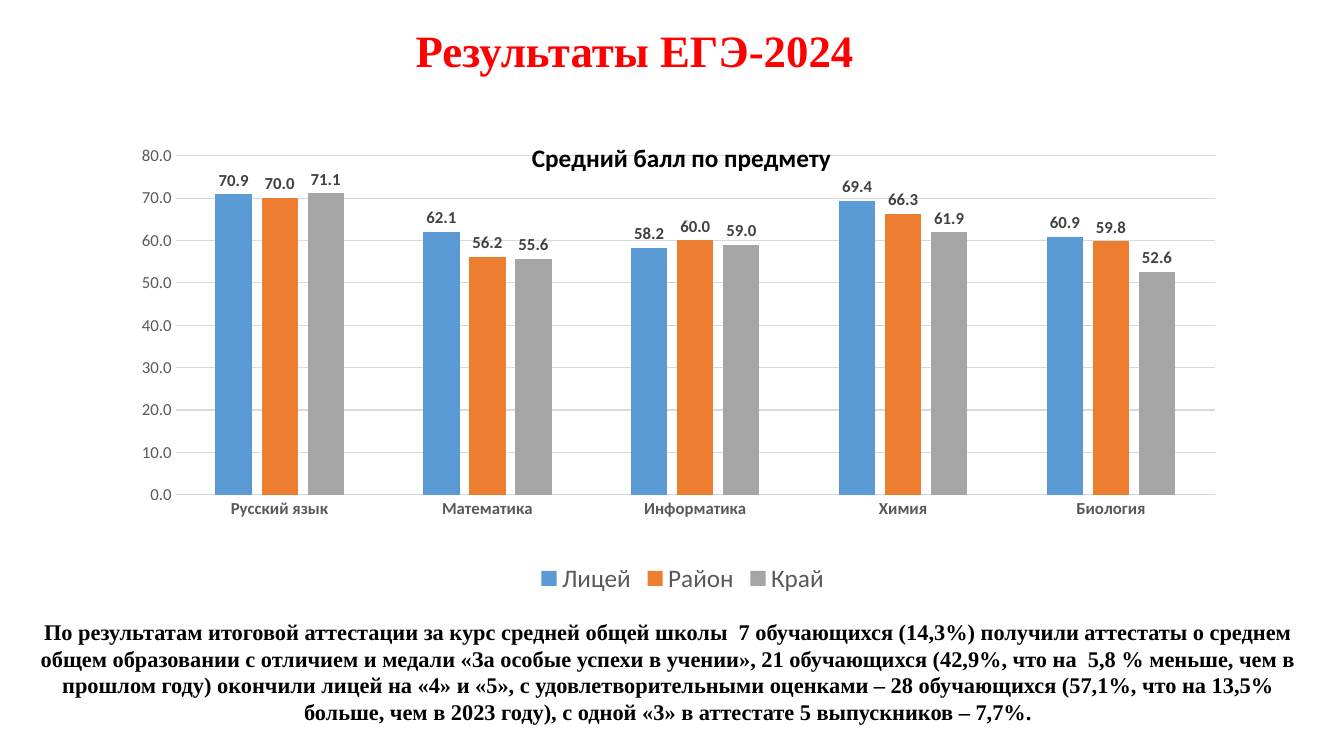
import pptx
import pptx.chart.data
import pptx.dml.color
import pptx.enum.chart
import pptx.enum.text
import pptx.oxml
import pptx.oxml.ns
import pptx.util

Inches = pptx.util.Inches
CENTER = pptx.enum.text.PP_ALIGN.CENTER
GREY = "595959"
GRID = "D9D9D9"


def style(font, size, color, bold=False, name="Calibri"):
    font.name = name
    font.size = pptx.util.Pt(size)
    font.bold = bold
    font.color.rgb = pptx.dml.color.RGBColor.from_string(color)


def set_layout(element, index, **shares):
    """Give a chart part a manual layout, in shares of the chart's size."""
    for old in element.findall(pptx.oxml.ns.qn("c:layout")):
        element.remove(old)
    settings = "".join(f'<c:{key} val="{value}"/>' for key, value in shares.items())
    element.insert(index, pptx.oxml.parse_xml(
        f'<c:layout {pptx.oxml.ns.nsdecls("c")}>'
        f"<c:manualLayout>{settings}</c:manualLayout></c:layout>"))


presentation = pptx.Presentation()
presentation.slide_width = Inches(13.33)
presentation.slide_height = Inches(7.5)
slide = presentation.slides.add_slide(presentation.slide_layouts[5])

# Heading
heading = slide.shapes.title
heading.left, heading.top = Inches(0.85), Inches(0.15)
heading.width, heading.height = Inches(10.89), Inches(0.76)
heading.text_frame.text = "Результаты ЕГЭ-2024"
heading.text_frame.vertical_anchor = pptx.enum.text.MSO_ANCHOR.MIDDLE
heading_line = heading.text_frame.paragraphs[0]
heading_line.alignment = CENTER
heading_line.line_spacing = 0.9
style(heading_line.font, 32, "FF0000", True, "Times New Roman")

# Average scores by subject
scores = pptx.chart.data.CategoryChartData(number_format="0.0")
scores.categories = ["Русский язык", "Математика", "Информатика", "Химия", "Биология"]
scores.add_series("Лицей", [70.9, 62.1, 58.2, 69.4, 60.9])
scores.add_series("Район", [70, 56.2, 60, 66.3, 59.8])
scores.add_series("Край", [71.1, 55.6, 59, 61.9, 52.6])
chart = slide.shapes.add_chart(
    pptx.enum.chart.XL_CHART_TYPE.COLUMN_CLUSTERED,
    Inches(1.27), Inches(1.1), Inches(11), Inches(4.84), scores).chart
style(chart.font, 10, "000000")

chart.has_title = True
chart_title = chart.chart_title
chart_title.text_frame.text = "Средний балл по предмету"
style(chart_title.text_frame.paragraphs[0].font, 18, "000000", True)
set_layout(chart_title._element, 1, xMode="edge", yMode="edge", x=0.36, y=0.05)

chart.has_legend = True
chart.legend.position = pptx.enum.chart.XL_LEGEND_POSITION.BOTTOM
chart.legend.include_in_layout = False
style(chart.legend.font, 18, GREY)

subjects, points = chart.category_axis, chart.value_axis
for axis in (subjects, points):
    axis.major_tick_mark = pptx.enum.chart.XL_TICK_MARK.NONE
    axis.minor_tick_mark = pptx.enum.chart.XL_TICK_MARK.NONE
    style(axis.tick_labels.font, 12, GREY, axis is subjects)
points.minimum_scale, points.maximum_scale, points.major_unit = 0, 80, 10
points.tick_labels.number_format = "0.0"
points.tick_labels.number_format_is_linked = False
points.format.line.fill.background()
for line in (subjects.format.line, points.major_gridlines.format.line):
    line.width = pptx.util.Pt(0.75)
    line.color.rgb = pptx.dml.color.RGBColor.from_string(GRID)

columns = chart.plots[0]
columns.gap_width = 219
columns.overlap = -27
columns.vary_by_categories = False
for series, color in zip(columns.series, ("5B9BD5", "ED7D31", "A5A5A5")):
    series.format.fill.solid()
    series.format.fill.fore_color.rgb = pptx.dml.color.RGBColor.from_string(color)
    labels = series.data_labels
    labels.show_value = True
    labels.number_format = "0.0"
    labels.number_format_is_linked = False
    labels.position = pptx.enum.chart.XL_LABEL_POSITION.OUTSIDE_END
    style(labels.font, 12, "404040", True)
plot_area = chart._chartSpace.chart.plotArea
set_layout(plot_area, 0, layoutTarget="inner", xMode="edge", yMode="edge",
           x=0.043, y=0.092, w=0.937, h=0.695)

# Summary
summary = slide.shapes.add_textbox(
    Inches(0.1), Inches(6.08), Inches(13.05), Inches(1.18)).text_frame
summary.word_wrap = True
summary.auto_size = pptx.enum.text.MSO_AUTO_SIZE.SHAPE_TO_FIT_TEXT
summary.text = (
    "По результатам итоговой аттестации за курс средней общей школы  7 обучающихся "
    "(14,3%) получили аттестаты о среднем общем образовании с отличием и медали "
    "«За особые успехи в учении», 21 обучающихся (42,9%, что на  5,8 % меньше, чем "
    "в прошлом году) окончили лицей на «4» и «5», с удовлетворительными оценками – "
    "28 обучающихся (57,1%, что на 13,5% больше, чем в 2023 году), с одной «3» "
    "в аттестате 5 выпускников – 7,7%.")
summary.paragraphs[0].alignment = CENTER
style(summary.paragraphs[0].font, 16, "000000", True, "Times New Roman")

presentation.save("out.pptx")
